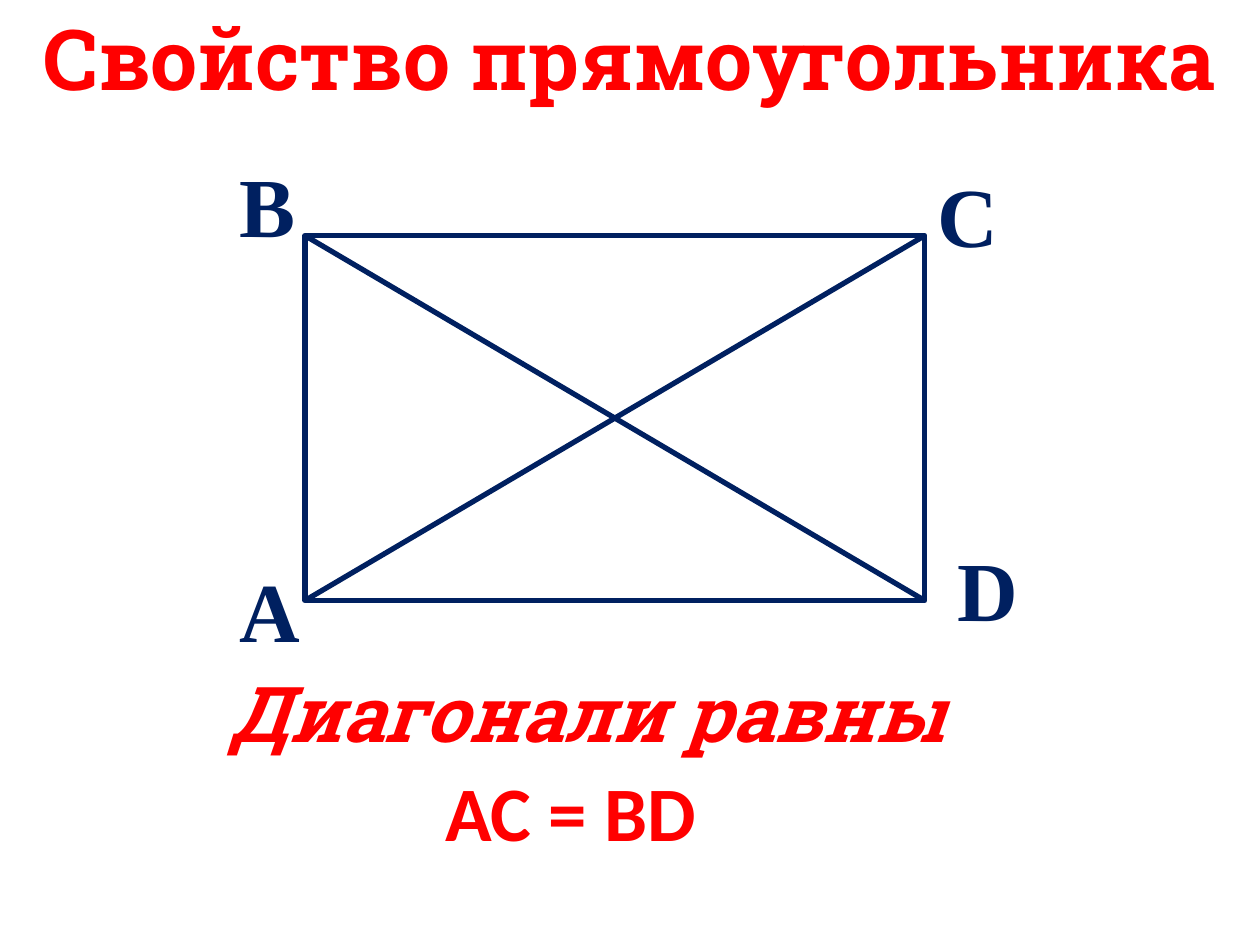
from pptx import Presentation
from pptx import util as u
from pptx.dml.color import RGBColor
from pptx.enum import shapes, text
from pptx.oxml.ns import qn
from lxml import etree

RED, NAVY = "FF0000", "002060"
LEFT, TOP, RIGHT, BOTTOM = 174.24, 134.64, 528.48, 343.2
LINE_WIDTH = 3

# Text, box (left, top, width, height), format
HEADING = dict(name="Roboto Slab", size=48, bold=True, color=RED)
PROPERTY = dict(name="Roboto Slab", size=44, bold=True, italic=True, color=RED)
EQUATION = dict(name="Calibri", size=44, bold=True, color=RED)
VERTEX = dict(name="Times New Roman", size=48, bold=True, color=NAVY)

statements = [
    ("Свойство прямоугольника", (0, 0, 720, 65.4), HEADING, text.PP_ALIGN.CENTER),
    ("Диагонали равны", (123.84, 376.56, 551.5, 60.6), PROPERTY, text.PP_ALIGN.LEFT),
    ("АС = ВD", (247.68, 433.44, 213.8, 60.6), EQUATION, text.PP_ALIGN.LEFT),
]
vertices = [("А", 129.6, 315.36), ("В", 129.6, 84.24),
            ("С", 528.48, 90), ("D", 540, 303.84)]
diagonals = [(RIGHT, BOTTOM, LEFT, TOP), (LEFT, BOTTOM, RIGHT, TOP)]


def rgb(value):
    return RGBColor.from_string(value)


def points(values):
    return [u.Pt(value) for value in values]


def style_line(line):
    line.color.rgb = rgb(NAVY)
    line.width = u.Pt(LINE_WIDTH)


def add_label(slide, words, box, style, align=text.PP_ALIGN.LEFT):
    frame = slide.shapes.add_textbox(*points(box)).text_frame
    frame.word_wrap = True
    paragraph = frame.paragraphs[0]
    paragraph.alignment = align
    run = paragraph.add_run()
    run.text = words
    for key, value in style.items():
        if key == "color":
            run.font.color.rgb = rgb(value)
        else:
            setattr(run.font, key, u.Pt(value) if key == "size" else value)


def main():
    deck = Presentation()
    deck.slide_width, deck.slide_height = points((720, 540))
    slide = deck.slides.add_slide(deck.slide_layouts[6])

    # Diagonals
    for ends in diagonals:
        diagonal = slide.shapes.add_connector(
            shapes.MSO_CONNECTOR.STRAIGHT, *points(ends))
        style_line(diagonal.line)
        etree.SubElement(diagonal._element.spPr, qn("a:effectLst"))

    # Heading, property and equation
    for words, box, style, align in statements:
        add_label(slide, words, box, style, align)

    # Vertex letters
    for letter, x, y in vertices:
        add_label(slide, letter, (x, y, 56.2, 65.4), VERTEX)

    # Rectangle
    rectangle = slide.shapes.add_shape(
        shapes.MSO_SHAPE.RECTANGLE,
        *points((LEFT, TOP, RIGHT - LEFT, BOTTOM - TOP)))
    rectangle.shadow.inherit = False
    rectangle.fill.background()
    style_line(rectangle.line)

    deck.save("out.pptx")


if __name__ == "__main__":
    main()
